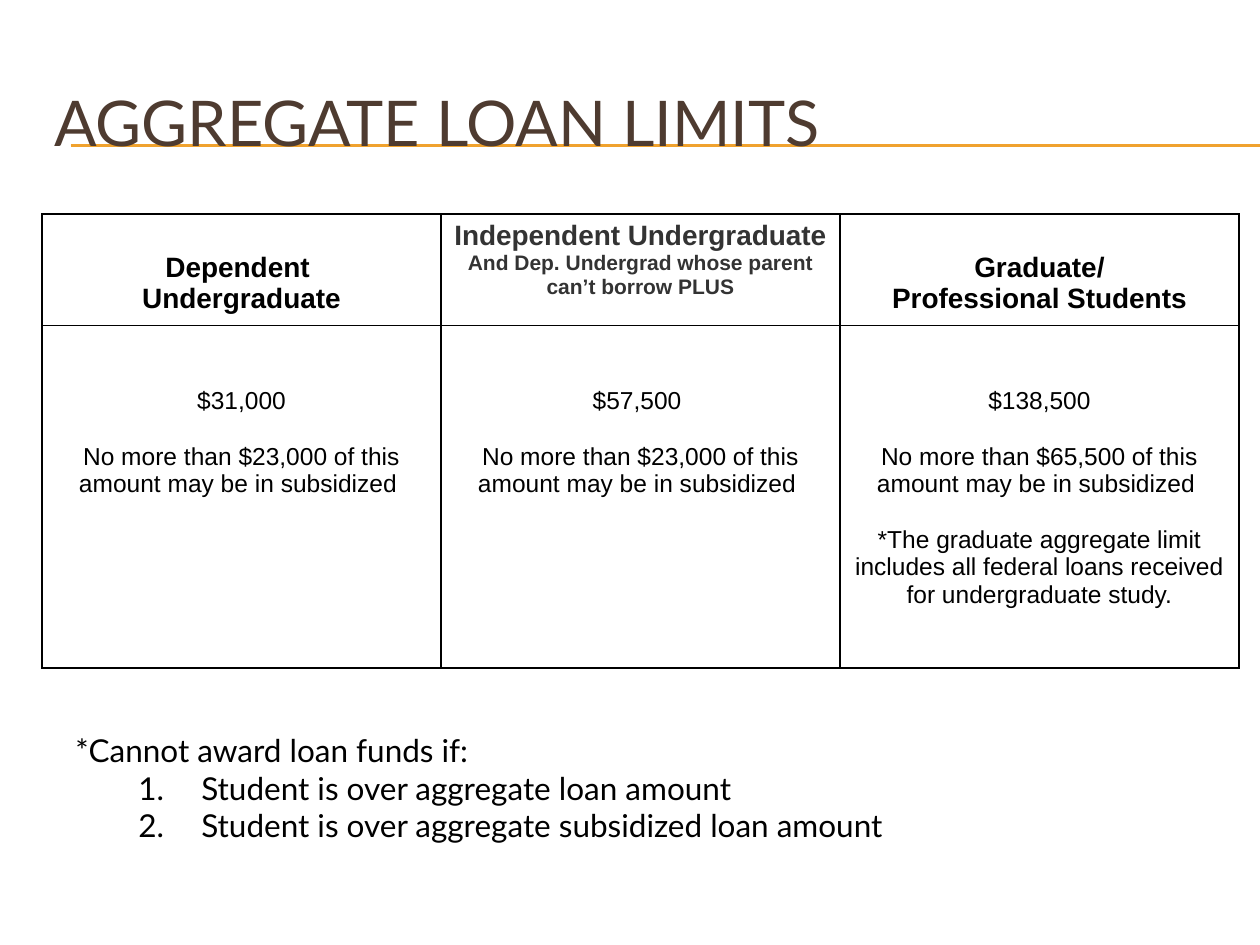
from dataclasses import dataclass

from lxml.etree import SubElement
from pptx import Presentation
from pptx.dml.color import RGBColor as Color
from pptx.enum.shapes import MSO_CONNECTOR as Connector
from pptx.enum.text import MSO_ANCHOR as Anchor, MSO_AUTO_SIZE as AutoSize, PP_ALIGN as Align
from pptx.oxml.ns import qn
from pptx.util import Inches, Pt


@dataclass(frozen=True)
class Theme:
    heading_font: str = "Lato"
    table_font: str = "Arial"
    title_color: str = "4E3B30"
    rule_color: str = "F0A22E"
    ink: str = "000000"
    soft_ink: str = "333333"
    title_size: int = 36
    note_size: int = 18
    header_size: int = 16
    body_size: int = 14
    small_size: int = 12


THEME = Theme()
WIDTH, HEIGHT = 10, 7.5

TITLE = "AGGREGATE LOAN LIMITS"
HEADERS = [
    ["Dependent ", "Undergraduate"],
    ["Independent Undergraduate", "And Dep. Undergrad whose parent can’t borrow PLUS"],
    ["Graduate/", "Professional Students"],
]
LIMITS = [
    ["$31,000", "No more than $23,000 of this amount may be in subsidized "],
    ["$57,500 ", "No more than $23,000 of this amount may be in subsidized "],
    [
        "$138,500",
        "No more than $65,500 of this amount may be in subsidized ",
        "*The graduate aggregate limit includes all federal loans received for undergraduate study.",
    ],
]
NOTE_LEAD = "*Cannot award loan funds if:"
NOTE_ITEMS = ["Student is over aggregate loan amount", "Student is over aggregate subsidized loan amount"]

MARGIN = WIDTH / 30
CONTENT_WIDTH = WIDTH * 0.95
TABLE_TOP = 1.7
ROW_HEIGHTS = [0.84, 2.72]
ROW_INSETS = [0.3, 0.49]
RULE_LEFT = 0.56
RULE_TOPS = [1.15, 1.16]
ITEM_INDENT = 0.5


def add_text(frame, text, *, size, font, color, bold=False, align=Align.LEFT, before=0, level=0, indent=0):
    paragraph = frame.paragraphs[0]
    if paragraph.runs:
        paragraph = frame.add_paragraph()
    paragraph.alignment = align
    paragraph.space_before = Pt(before)
    paragraph.level = level
    properties = paragraph._p.get_or_add_pPr()
    properties.set("marL", str(Inches(indent)))
    properties.set("indent", "0")
    run = paragraph.add_run()
    run.text = text
    run.font.size = Pt(size)
    run.font.name = font
    run.font.bold = bold
    run.font.color.rgb = Color.from_string(color)


def add_box(slide, left, top, width, height, anchor=Anchor.TOP):
    shape = slide.shapes.add_textbox(*map(Inches, (left, top, width, height)))
    shape.text_frame.word_wrap = True
    shape.text_frame.vertical_anchor = anchor
    return shape.text_frame


def add_rule(slide, top):
    rule = slide.shapes.add_connector(
        Connector.STRAIGHT, Inches(RULE_LEFT), Inches(top), Inches(WIDTH), Inches(top)
    )
    rule.line.color.rgb = Color.from_string(THEME.rule_color)
    rule.line.width = Pt(0.75)
    SubElement(rule._element.spPr, qn("a:effectLst"))


def style_cell(cell, inset):
    cell.margin_top = Inches(inset)
    properties = cell._tc.get_or_add_tcPr()
    for side in ("a:lnL", "a:lnR", "a:lnT", "a:lnB"):
        border = SubElement(properties, qn(side), w=str(Pt(1)))
        fill = SubElement(border, qn("a:solidFill"))
        SubElement(fill, qn("a:srgbClr"), val=THEME.ink)
    cell.fill.background()


def add_limits_table(slide):
    shape = slide.shapes.add_table(
        len(ROW_HEIGHTS), len(HEADERS), Inches(MARGIN), Inches(TABLE_TOP),
        Inches(CONTENT_WIDTH), Inches(sum(ROW_HEIGHTS)),
    )
    table = shape.table
    table.first_row = table.horz_banding = False
    for row, height in zip(table.rows, ROW_HEIGHTS):
        row.height = Inches(height)
    for column, (header, limits) in enumerate(zip(HEADERS, LIMITS)):
        has_subtitle = column == 1
        head, body = table.cell(0, column), table.cell(1, column)
        style_cell(head, 0.05 if has_subtitle else ROW_INSETS[0])
        style_cell(body, ROW_INSETS[1])
        for index, line in enumerate(header):
            add_text(
                head.text_frame, line, font=THEME.table_font, bold=True, align=Align.CENTER,
                size=THEME.small_size if has_subtitle and index else THEME.header_size,
                color=THEME.soft_ink if has_subtitle else THEME.ink,
            )
        for index, line in enumerate(limits):
            add_text(
                body.text_frame, line, font=THEME.table_font, size=THEME.body_size,
                color=THEME.ink, align=Align.CENTER, before=16 if index else 0,
            )


def main():
    presentation = Presentation()
    presentation.slide_width, presentation.slide_height = Inches(WIDTH), Inches(HEIGHT)
    slide = presentation.slides.add_slide(presentation.slide_layouts[6])

    for top in RULE_TOPS:
        add_rule(slide, top)
    title = add_box(slide, MARGIN, 0.5, CONTENT_WIDTH, 0.92, Anchor.MIDDLE)
    add_text(title, TITLE, size=THEME.title_size, font=THEME.heading_font, color=THEME.title_color)

    add_limits_table(slide)

    note = add_box(slide, 0.5, 5.75, 8.17, 1.01)
    note.auto_size = AutoSize.SHAPE_TO_FIT_TEXT
    note_format = {"size": THEME.note_size, "font": THEME.heading_font, "color": THEME.ink}
    add_text(note, NOTE_LEAD, **note_format)
    for number, item in enumerate(NOTE_ITEMS, 1):
        add_text(note, f"{number}.\t{item}", level=1, indent=ITEM_INDENT, **note_format)

    presentation.save("out.pptx")


if __name__ == "__main__":
    main()
